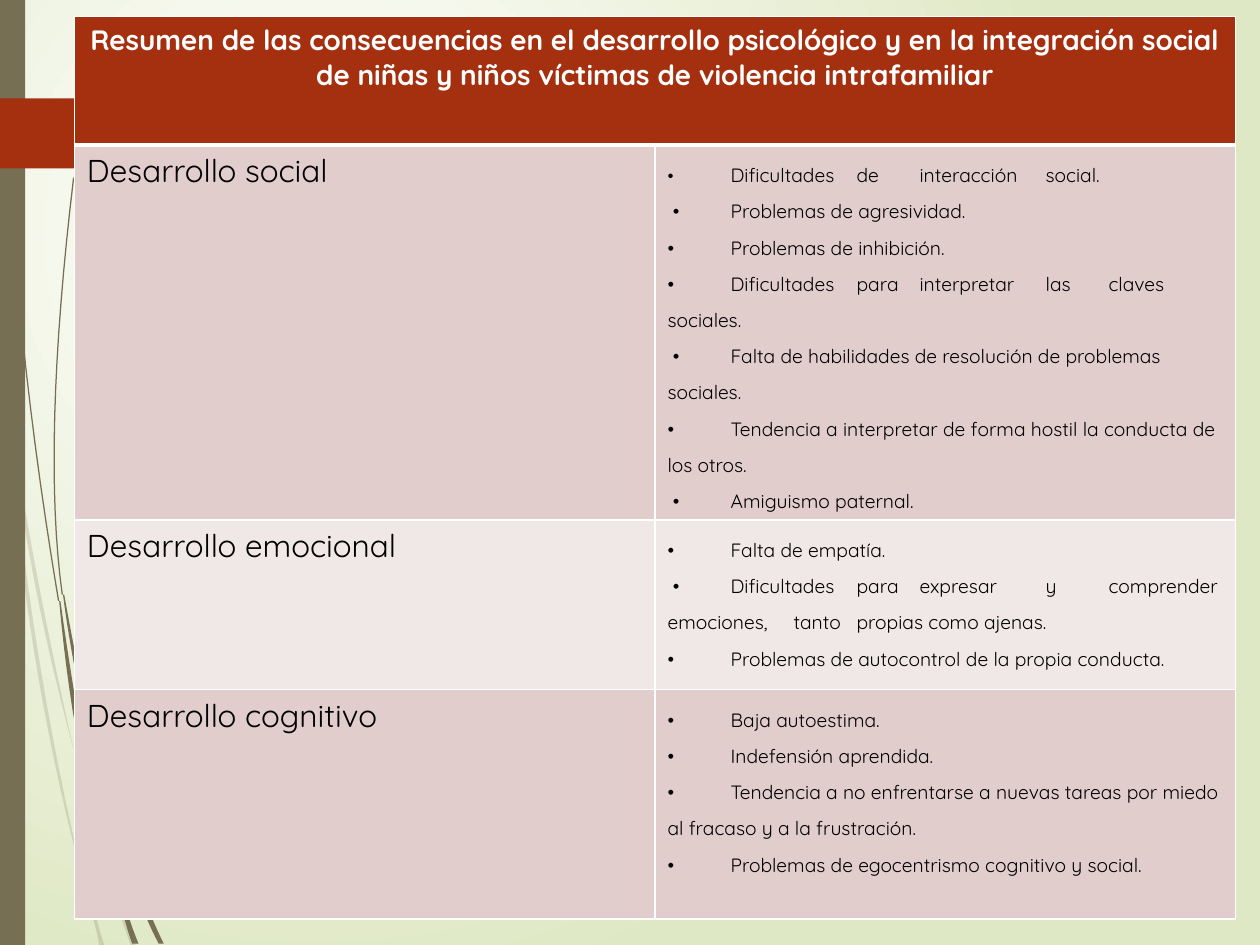
from lxml.etree import SubElement
from pptx import Presentation
from pptx.dml.color import RGBColor
from pptx.enum.shapes import MSO_SHAPE
from pptx.enum.text import PP_ALIGN
from pptx.oxml.ns import qn
from pptx.util import Pt

THEME = {
    "font": "Quicksand",
    "white": RGBColor.from_string("FFFFFF"),
    "black": RGBColor.from_string("000000"),
    "meadow": RGBColor.from_string("DFE8C4"),
    "olive": RGBColor.from_string("766F54"),
    "rust": RGBColor.from_string("A53010"),
    "bands": (RGBColor.from_string("E1CDCC"), RGBColor.from_string("F0E8E7")),
    "title": 16, "area": 18, "item": 11, "bullet": 10,
}

TITLE = ("Resumen de las consecuencias en el desarrollo psicológico y en la "
         "integración social de niñas y niños víctimas de violencia intrafamiliar")
AREAS = [
    ("Desarrollo social", [
        "•\tDificultades\tde\tinteracción\tsocial.",
        " •\tProblemas de agresividad.",
        "•\tProblemas de inhibición.",
        "•\tDificultades\tpara\tinterpretar\tlas\tclaves\tsociales.",
        " •\tFalta de habilidades de resolución de problemas sociales.",
        "•\tTendencia a interpretar de forma hostil la conducta de los otros.",
        " •\tAmiguismo paternal."]),
    ("Desarrollo emocional", [
        "•\tFalta de empatía.",
        " •\tDificultades\tpara\texpresar\ty\tcomprender\temociones,\ttanto\tpropias como ajenas.",
        "•\tProblemas de autocontrol de la propia conducta."]),
    ("Desarrollo cognitivo", [
        "•\tBaja autoestima.",
        "•\tIndefensión aprendida.",
        "•\tTendencia a no enfrentarse a nuevas tareas por miedo al fracaso y a la frustración.",
        "•\tProblemas de egocentrismo cognitivo y social."]),
]
ROW_HEIGHTS = [73.5, 214, 97, 131]
TABLE_LEFT, TABLE_TOP, COLUMN_WIDTH = 42.5, 9.4, 331.8

BLADE_UNIT = 0.72
PALE_BLADES = [
    ((0, 290), (4, 322), (8, 350), 1, 0),
    ((10, 350), (29, 470), (59, 597), 3, 0),
    ((61, 600), (82, 682), (104, 751), 3, 4),
    ((8, 350), (30, 535), (70, 714), 3, 0),
    ((70, 714), (75, 733), (79, 751), 1, 3),
    ((65, 683), (73, 722), (82, 751), 2, 1),
]
DARK_BLADES = [
    ((2, 0), (14, 233), (46, 477), 1, 1),
    ((50, 472), (65, 558), (87, 640), 3, 1),
    ((91, 645), (107, 704), (126, 749), 4, 4),
    ((47, 477), (66, 610), (97, 722), 4, 0),
    ((58, 141), (43, 330), (49, 472), 1, 1),
    ((97, 722), (101, 737), (105, 749), 2, 3),
    ((91, 691), (98, 724), (108, 749), 3, 2),
]


def through(first, middle, last, t):
    bend = 2 * middle - (first + last) / 2
    return (1 - t) ** 2 * first + 2 * t * (1 - t) * bend + t * t * last


def paint(shape, color, opacity=100):
    shape.shadow.inherit = False
    shape.fill.solid()
    shape.fill.fore_color.rgb = color
    shape.line.fill.background()
    if opacity < 100:
        fill = shape._element.spPr.find(qn("a:solidFill"))
        SubElement(fill[0], qn("a:alpha"), val=str(opacity * 1000))


def draw_blade(shapes, blade, opacity, steps=16):
    *nodes, middle_width, end_width = blade
    left, right = [], []
    for step in range(steps + 1):
        t = step / steps
        x, y = (through(*values, t) for values in zip(*nodes))
        width = through(1, middle_width, end_width, t)
        left.append((Pt(x * BLADE_UNIT), Pt(y * BLADE_UNIT)))
        right.append((Pt((x + width) * BLADE_UNIT), Pt(y * BLADE_UNIT)))
    builder = shapes.build_freeform(*left[0])
    builder.add_line_segments(left[1:] + right[::-1], close=True)
    paint(builder.convert_to_shape(), THEME["olive"], opacity)


def add_span(para, text, size, color, bold=False):
    span = para.add_run()
    span.text = text
    for name, value in {"name": THEME["font"], "size": Pt(size), "bold": bold}.items():
        setattr(span.font, name, value)
    span.font.color.rgb = color


def add_tabs(para):
    tabs = SubElement(para._p.get_or_add_pPr(), qn("a:tabLst"))
    for stop in range(1, 10):
        SubElement(tabs, qn("a:tab"), pos=str(Pt(36 * stop)), algn="l")


def style_cell(cell, color, top=1, bottom=1):
    properties = cell._tc.get_or_add_tcPr()
    for side, width in {"L": 1, "R": 1, "T": top, "B": bottom}.items():
        line = SubElement(properties, qn("a:ln" + side), w=str(Pt(width)))
        SubElement(SubElement(line, qn("a:solidFill")), qn("a:srgbClr"), val=str(THEME["white"]))
    cell.fill.solid()
    cell.fill.fore_color.rgb = color


def paint_background(page):
    fill = page.background.fill
    fill.gradient()
    for stop, color in zip(fill.gradient_stops, (THEME["white"], THEME["meadow"])):
        stop.color.rgb = color
    gradient = page._element.find(".//" + qn("a:gradFill"))
    gradient.remove(gradient.find(qn("a:lin")))
    circle = SubElement(gradient, qn("a:path"), path="circle")
    SubElement(circle, qn("a:fillToRect"), l="50000", t="50000", r="100000", b="100000")


def add_summary(page):
    table = page.shapes.add_table(len(ROW_HEIGHTS), 2, Pt(TABLE_LEFT), Pt(TABLE_TOP),
                                  Pt(2 * COLUMN_WIDTH), Pt(sum(ROW_HEIGHTS))).table
    table.horz_banding = False
    for column in table.columns:
        column.width = Pt(COLUMN_WIDTH)
    for row, height in zip(table.rows, ROW_HEIGHTS):
        row.height = Pt(height)
    header = table.cell(0, 0)
    header.merge(table.cell(0, 1))
    for column in range(2):
        style_cell(table.cell(0, column), THEME["rust"], bottom=3)
    para = header.text_frame.paragraphs[0]
    para.alignment = PP_ALIGN.CENTER
    add_span(para, TITLE, THEME["title"], THEME["white"], True)
    for index, (area, items) in enumerate(AREAS, 1):
        name_cell, list_cell = table.cell(index, 0), table.cell(index, 1)
        for cell in (name_cell, list_cell):
            style_cell(cell, THEME["bands"][(index - 1) % 2], top=3 if index == 1 else 1)
        add_span(name_cell.text_frame.paragraphs[0], area, THEME["area"], THEME["black"])
        frame = list_cell.text_frame
        for order, item in enumerate(items):
            para = frame.add_paragraph() if order else frame.paragraphs[0]
            para.line_spacing = 1.5
            add_tabs(para)
            if index == 1 and order == 0:
                add_span(para, item[:2], THEME["bullet"], THEME["black"])
                item = item[2:]
            add_span(para, item, THEME["item"], THEME["black"])


def main():
    deck = Presentation()
    deck.slide_width, deck.slide_height = Pt(720), Pt(540)
    page = deck.slides.add_slide(deck.slide_layouts[6])
    paint_background(page)
    for blades, opacity in ((PALE_BLADES, 20), (DARK_BLADES, 100)):
        group = page.shapes.add_group_shape()
        for blade in blades:
            draw_blade(group.shapes, blade, opacity)
    stripe = page.shapes.add_shape(MSO_SHAPE.RECTANGLE, Pt(0), Pt(0), Pt(14.4), Pt(540))
    paint(stripe, THEME["olive"])
    arrow = page.shapes.add_shape(MSO_SHAPE.PENTAGON, Pt(0), Pt(56.2), Pt(107.5), Pt(40))
    paint(arrow, THEME["rust"])
    add_summary(page)
    deck.save("out.pptx")


if __name__ == "__main__":
    main()
